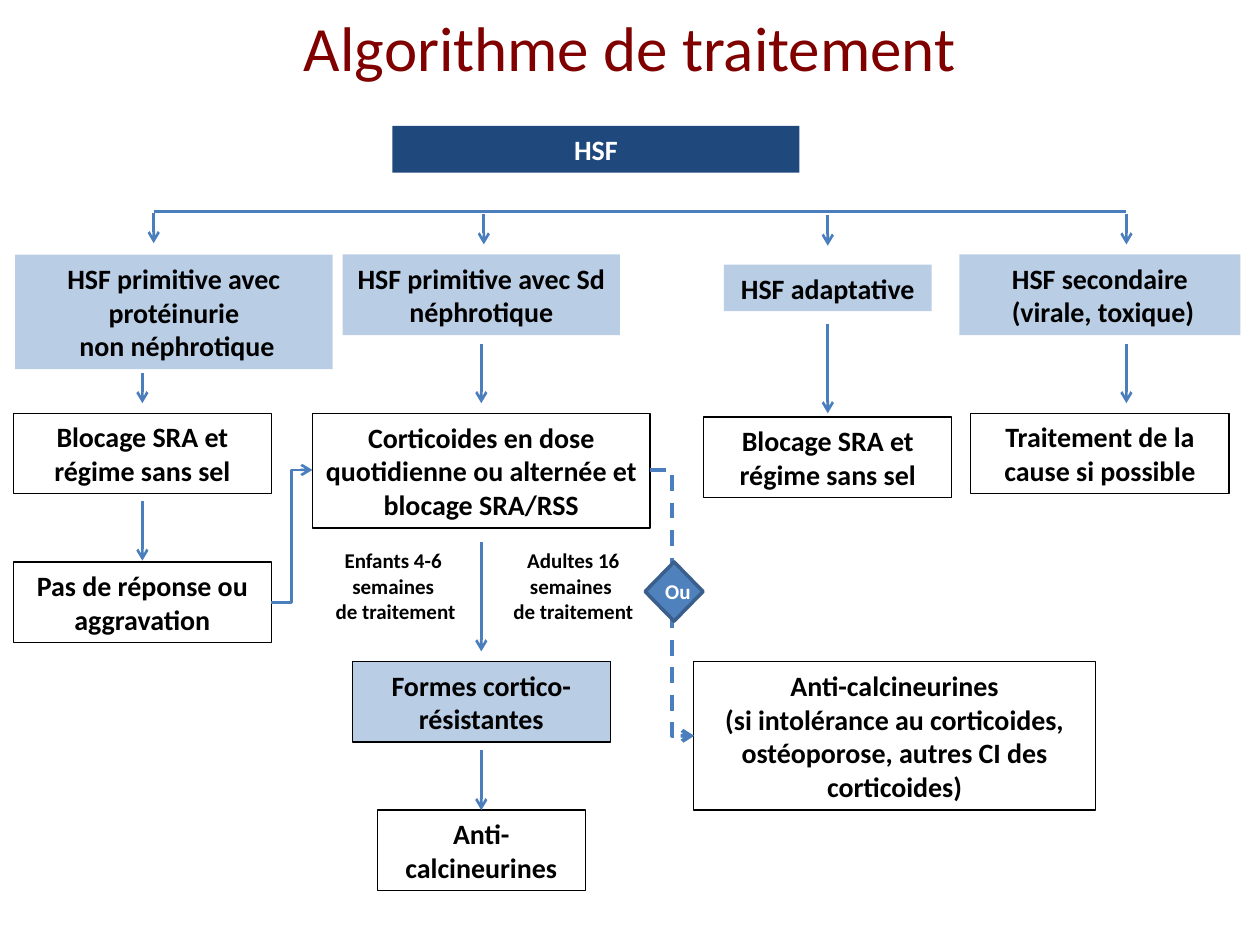
import lxml.etree
import pptx
import pptx.util
import pptx.dml.color
import pptx.enum.dml
import pptx.enum.shapes
import pptx.enum.text
import pptx.oxml.ns

WIDTH, HEIGHT = 10, 7.5
FONT = "Calibri"
BLUE, NAVY, PALE, WHITE, BLACK = "4B7EBC", "1F497D", "B9CDE5", "FFFFFF", "000000"
TITLE = "Algorithme de traitement"

COLS = {"proteinuria": 1.13, "nephrotic": 3.82, "adaptive": 6.57, "secondary": 8.73}
ROWS = {"root": 1, "form": 2.02, "treatment": 3.28, "outcome": 4.46, "resistant": 5.25, "last": 6.43}
LINE_HEIGHT, PADDING = 0.27, 0.1

ROOT = (NAVY, None, WHITE)
FORM = (PALE, None, BLACK)
STEP = (WHITE, BLACK, BLACK)
RESISTANT = (PALE, BLACK, BLACK)

BOXES = [
    ("HSF", "nephrotic", 0.91, "root", 0, 3.23, 1, ROOT),
    ("HSF primitive avec protéinurie\n non néphrotique", "proteinuria", 0.25, "form", 0, 2.52, 3, FORM),
    ("HSF primitive avec Sd néphrotique", "nephrotic", 0, "form", 0, 2.2, 2, FORM),
    ("HSF adaptative", "adaptive", 0, "form", 0.08, 1.65, 1, FORM),
    ("HSF secondaire\n (virale, toxique)", "secondary", 0, "form", 0, 2.23, 2, FORM),
    ("Blocage SRA et régime sans sel", "proteinuria", 0, "treatment", 0, 2.05, 2, STEP),
    ("Corticoides en dose quotidienne ou alternée et blocage SRA/RSS",
     "nephrotic", 0, "treatment", 0, 2.68, 3, STEP),
    ("Blocage SRA et régime sans sel", "adaptive", 0, "treatment", 0.03, 1.97, 2, STEP),
    ("Traitement de la cause si possible", "secondary", 0, "treatment", 0, 2.05, 2, STEP),
    ("Pas de réponse ou aggravation", "proteinuria", 0, "outcome", 0, 2.05, 2, STEP),
    ("Formes cortico-résistantes", "nephrotic", 0, "resistant", 0, 2.05, 2, RESISTANT),
    ("Anti-calcineurines\n(si intolérance au corticoides, ostéoporose, autres CI des corticoides)",
     "adaptive", 0.53, "resistant", 0, 3.19, 4, STEP),
    ("Anti-calcineurines", "nephrotic", 0, "last", 0, 1.65, 2, STEP),
]

BRANCH_Y = 1.68
BRANCHES = [(1.22, 0.01), (3.84, 0.02), (6.57, 0.03), (8.94, 0.02)]
BRANCH_DROP = 0.24
DOWN_ARROWS = [
    (COLS["nephrotic"], 2.73, 3.2),
    (BRANCHES[-1][0], 2.73, 3.2),
    (COLS["adaptive"], 2.57, 3.28),
    (COLS["proteinuria"], 3.98, 4.45),
    (COLS["nephrotic"], 5.95, 6.43),
    (COLS["nephrotic"], 4.3, 5.17),
    (COLS["proteinuria"], 2.96, 3.2),
]
DURATIONS = [
    ("Enfants 4-6 \nsemaines \nde traitement", 2.56),
    ("Adultes 16\nsemaines \nde traitement", 3.97),
]

CENTER = pptx.enum.text.PP_ALIGN.CENTER
LEFT = pptx.enum.text.PP_ALIGN.LEFT
STRAIGHT = pptx.enum.shapes.MSO_CONNECTOR.STRAIGHT
ELBOW = pptx.enum.shapes.MSO_CONNECTOR.ELBOW
SHAPE = pptx.enum.shapes.MSO_SHAPE

inch = pptx.util.Inches
rgb = pptx.dml.color.RGBColor.from_string
qn = pptx.oxml.ns.qn


def paint(fill, color):
    fill.solid()
    fill.fore_color.rgb = rgb(color)


def write(s, text, size, color, bold=True, align=CENTER, wrap=True):
    tf = s.text_frame
    tf.text = text
    tf.word_wrap = wrap
    for p in tf.paragraphs:
        p.alignment = align
        for r in p.runs:
            r.font.name = FONT
            r.font.size = pptx.util.Pt(size)
            r.font.bold = bold
            r.font.color.rgb = rgb(color)


def add_shape(slide, kind, box, fill, line, weight):
    s = slide.shapes.add_shape(kind, *map(inch, box))
    s.shadow.inherit = False
    paint(s.fill, fill)
    if line:
        paint(s.line.fill, line)
        s.line.width = pptx.util.Pt(weight)
    else:
        s.line.fill.background()
    return s


def add_box(slide, text, col, dx, row, dy, width, lines, style):
    fill, line, color = style
    box = (COLS[col] + dx - width / 2, ROWS[row] + dy, width, PADDING + lines * LINE_HEIGHT)
    s = add_shape(slide, SHAPE.RECTANGLE, box, fill, line, 0.75)
    write(s, text, 16, color)


def add_label(slide, text, box, color, align=CENTER):
    s = slide.shapes.add_textbox(*map(inch, box))
    write(s, text, 12, color, align=align, wrap=False)


def add_line(slide, start, end, kind=STRAIGHT, weight=1.5, dashed=False, arrow=True):
    s = slide.shapes.add_connector(kind, *map(inch, start + end))
    s.line.color.rgb = rgb(BLUE)
    s.line.width = pptx.util.Pt(weight)
    if dashed:
        s.line.dash_style = pptx.enum.dml.MSO_LINE.DASH
    sp_pr = s._element.spPr
    if arrow:
        lxml.etree.SubElement(sp_pr.find(qn("a:ln")), qn("a:tailEnd"), type="arrow")
    lxml.etree.SubElement(sp_pr, qn("a:effectLst"))


def main():
    prs = pptx.Presentation()
    prs.slide_width, prs.slide_height = inch(WIDTH), inch(HEIGHT)
    slide = prs.slides.add_slide(prs.slide_layouts[5])

    title = slide.shapes.title
    title.left, title.top, title.width, title.height = map(inch, (0.5, -0.26, 9, 1.25))
    write(title, TITLE, 36, "800000", bold=False)
    title.text_frame.vertical_anchor = pptx.enum.text.MSO_ANCHOR.MIDDLE

    for box in BOXES:
        add_box(slide, *box)

    add_line(slide, (BRANCHES[0][0], BRANCH_Y), (BRANCHES[-1][0], BRANCH_Y), arrow=False)
    for x, gap in BRANCHES:
        top = BRANCH_Y + gap
        add_line(slide, (x, top), (x, top + BRANCH_DROP))
    for x, top, bottom in DOWN_ARROWS:
        add_line(slide, (x, top), (x, bottom))

    add_line(slide, (2.15, 4.78), (2.48, 3.73), ELBOW)
    for text, left in DURATIONS:
        add_label(slide, text, (left, 4.3, 1.16, 0.71), BLACK)
    add_line(slide, (5.16, 3.73), (5.51, 5.84), ELBOW, 2.25, dashed=True)
    add_shape(slide, SHAPE.DIAMOND, (5.12, 4.46, 0.46, 0.47), "4F81BD", "3A5F8C", 2)
    add_label(slide, "Ou", (5.18, 4.54, 0.41, 0.3), WHITE, LEFT)

    prs.save("out.pptx")


if __name__ == "__main__":
    main()
